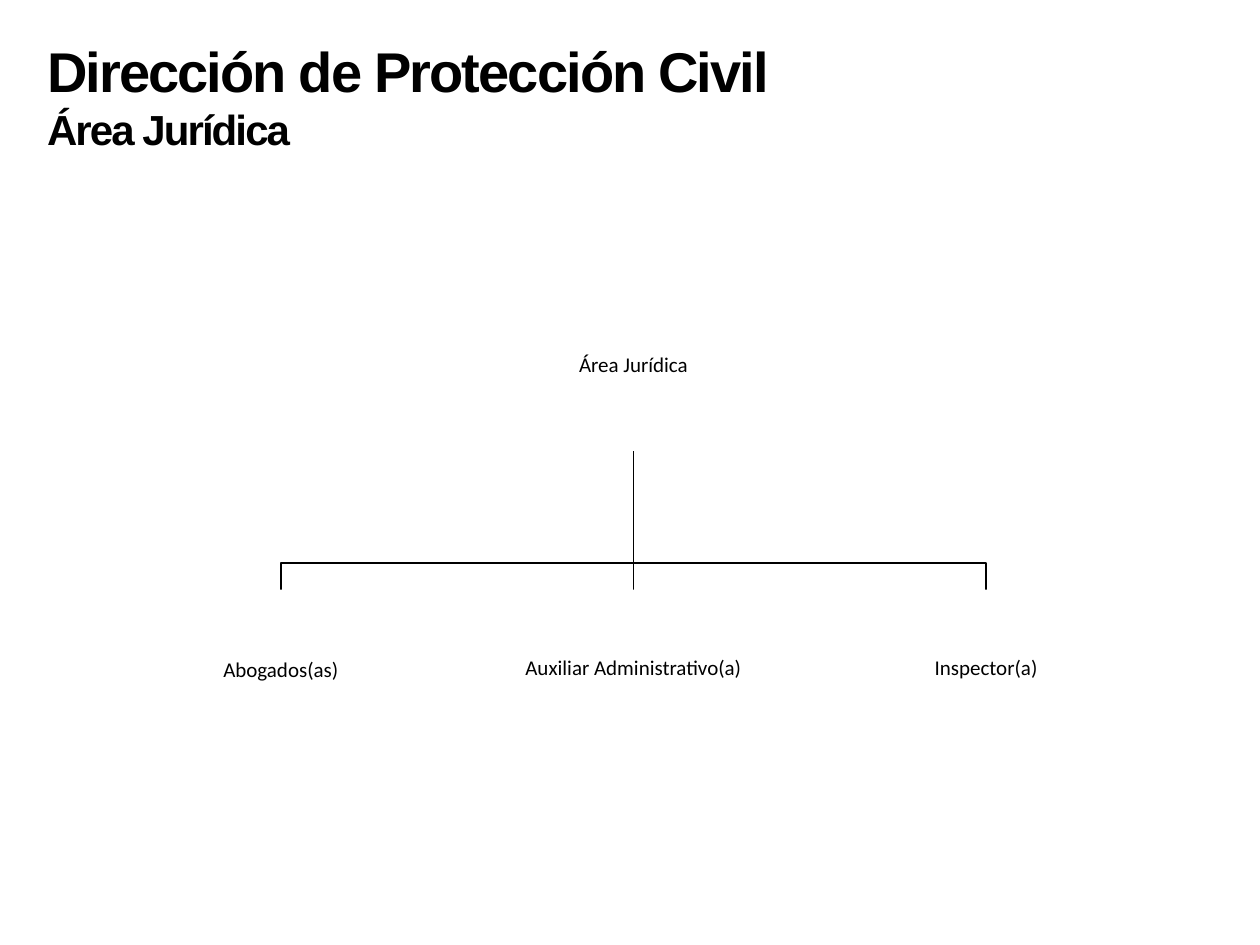
from pptx import Presentation
from pptx.dml.color import RGBColor
from pptx.enum.shapes import MSO_CONNECTOR, MSO_SHAPE
from pptx.enum.text import MSO_ANCHOR, PP_ALIGN
from pptx.oxml.ns import qn
from pptx.util import Pt
from lxml.etree import SubElement

# Content
TITLE = [("Dirección de Protección Civil", 32), ("Área Jurídica", 24)]
ROOT = "Área Jurídica"
# (label, line spacing)
POSTS = [("Abogados(as)", 1.0), ("Auxiliar Administrativo(a)", 0.9), ("Inspector(a)", 0.9)]
COLORS = {"ink": "000000", "box": "FFFFFF"}

# Layout in points
CENTER_X = 362
ROOT_TOP, ROOT_W, ROOT_H = 158.4, 203.8, 99.4
POST_TOP, POST_W, POST_H, PITCH = 337, 170.6, 90.7, 201.5
ROOT_BOTTOM = ROOT_TOP + ROOT_H
BUS_Y = 321.8

prs = Presentation()
prs.slide_width, prs.slide_height = Pt(720), Pt(540)
s = prs.slides.add_slide(prs.slide_layouts[6])


def rgb(name):
    return RGBColor.from_string(COLORS[name])


def add_run(p, text, **font):
    r = p.add_run()
    r.text = text
    r.font.color.rgb = rgb("ink")
    for key, value in font.items():
        setattr(r.font, key, value)
    return r


def style_line(sp):
    sp.line.color.rgb = rgb("ink")
    sp.line.width = Pt(1)


def add_label(sp, text, spacing=1.0):
    tf = sp.text_frame
    tf.word_wrap = True
    tf.vertical_anchor = MSO_ANCHOR.MIDDLE
    for side in ("left", "top", "right", "bottom"):
        setattr(tf, f"margin_{side}", Pt(0.7))
    p = tf.paragraphs[0]
    p.alignment = PP_ALIGN.CENTER
    p.line_spacing = spacing
    add_run(p, text, name="Calibri", size=Pt(12))


def add_branch(x):
    """Line from the root down to the post centred on x."""
    if x == CENTER_X:
        sp = s.shapes.add_connector(MSO_CONNECTOR.STRAIGHT, Pt(x), Pt(ROOT_BOTTOM),
                                    Pt(x), Pt(POST_TOP))
        SubElement(sp._element.spPr, qn("a:effectLst"))
    else:
        fb = s.shapes.build_freeform(Pt(CENTER_X), Pt(ROOT_BOTTOM))
        corners = [(CENTER_X, BUS_Y), (x, BUS_Y), (x, POST_TOP)]
        fb.add_line_segments([(Pt(a), Pt(b)) for a, b in corners], close=False)
        sp = fb.convert_to_shape()
        sp.fill.background()
        sp.shadow.inherit = False
    style_line(sp)


# Branches
centers = [CENTER_X + (i - (len(POSTS) - 1) / 2) * PITCH for i in range(len(POSTS))]
for x in centers:
    add_branch(x)

# Root and posts
root = s.shapes.add_textbox(Pt(CENTER_X - ROOT_W / 2), Pt(ROOT_TOP), Pt(ROOT_W), Pt(ROOT_H))
add_label(root, ROOT)
for x, (text, spacing) in zip(centers, POSTS):
    sp = s.shapes.add_shape(MSO_SHAPE.RECTANGLE, Pt(x - POST_W / 2), Pt(POST_TOP),
                            Pt(POST_W), Pt(POST_H))
    sp.shadow.inherit = False
    sp.fill.solid()
    sp.fill.fore_color.rgb = rgb("box")
    sp.line.fill.background()
    add_label(sp, text, spacing)

# Title
tf = s.shapes.add_textbox(Pt(19.8), Pt(17.3), Pt(573), Pt(75)).text_frame
tf.word_wrap = True
for i, (text, size) in enumerate(TITLE):
    p = tf.add_paragraph() if i else tf.paragraphs[0]
    r = add_run(p, text, name="Arial", size=Pt(size), bold=True)
    r.font._element.set("spc", "-110")

prs.save("out.pptx")
